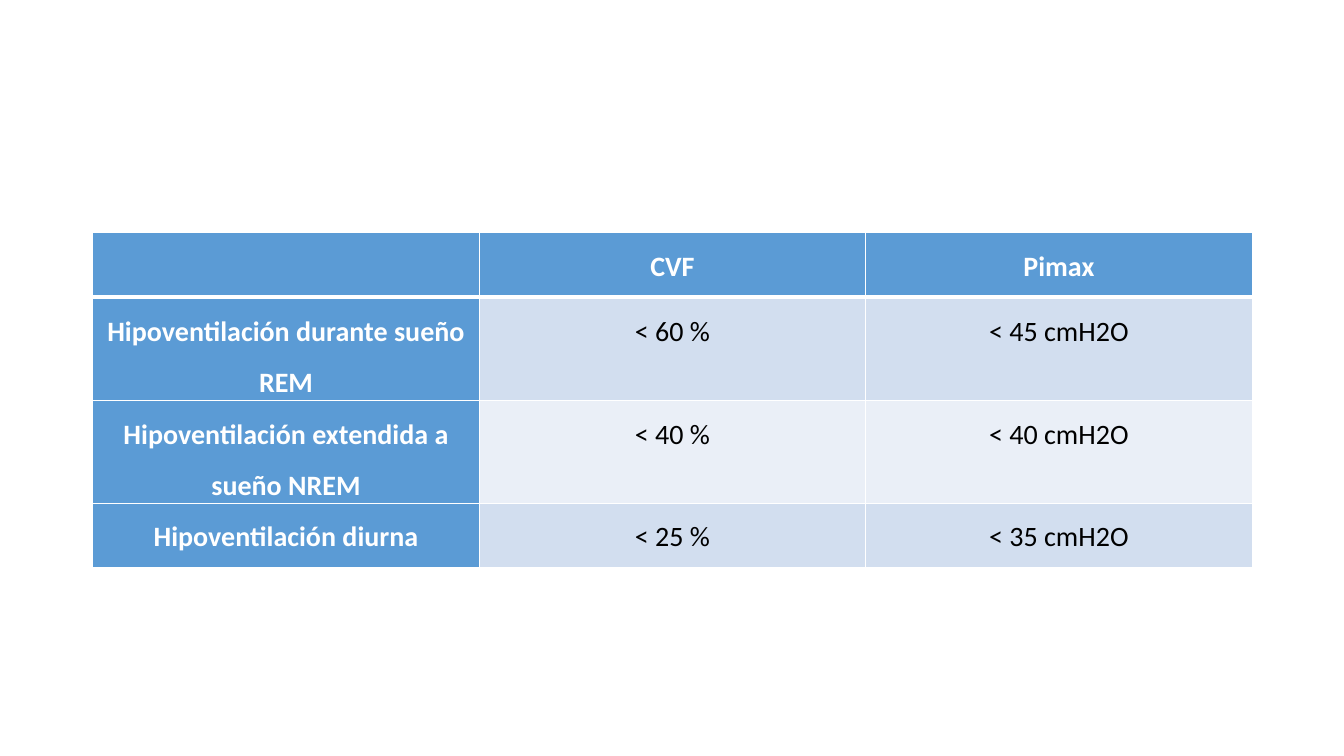
import pptx
import pptx.util
import pptx.dml.color
import pptx.enum.text
import pptx.oxml
import pptx.oxml.ns
from pptx.util import Inches

BLUE = pptx.dml.color.RGBColor(0x5B, 0x9B, 0xD5)
BAND_DARK = pptx.dml.color.RGBColor(0xD2, 0xDE, 0xEF)
BAND_LIGHT = pptx.dml.color.RGBColor(0xEA, 0xEF, 0xF7)
WHITE = pptx.dml.color.RGBColor(0xFF, 0xFF, 0xFF)
BLACK = pptx.dml.color.RGBColor(0, 0, 0)

ROWS = [
    ("", "CVF", "Pimax"),
    ("Hipoventilación durante sueño REM", "< 60 %", "< 45 cmH2O"),
    ("Hipoventilación extendida a sueño NREM", "< 40 %", "< 40 cmH2O"),
    ("Hipoventilación diurna", "< 25 %", "< 35 cmH2O"),
]
LEFT, TOP, WIDTH, ROW_HEIGHT = 0.92, 2.31, 11.5, 0.64


def set_borders(cell, widths):
    """Draw white cell borders, given widths in points by side."""
    properties = cell._tc.get_or_add_tcPr()
    for position, side in enumerate("LRTB"):
        border = pptx.oxml.parse_xml(
            f'<a:ln{side} {pptx.oxml.ns.nsdecls("a")} w="{pptx.util.Pt(widths[side])}">'
            f'<a:solidFill><a:srgbClr val="{WHITE}"/></a:solidFill></a:ln{side}>'
        )
        properties.insert(position, border)


def fill_cell(cell, text, row, column):
    """Write and format one cell according to its place in the table."""
    is_heading = row == 0 or column == 0
    band = BAND_DARK if row % 2 else BAND_LIGHT
    cell.fill.solid()
    cell.fill.fore_color.rgb = BLUE if is_heading else band
    set_borders(cell, {"L": 1, "R": 1, "T": 3 if row == 1 else 1, "B": 3 if row == 0 else 1})
    cell.margin_left = cell.margin_right = Inches(0.07)
    cell.margin_top = cell.margin_bottom = 0
    if not text:
        return
    paragraph = cell.text_frame.paragraphs[0]
    paragraph.alignment = pptx.enum.text.PP_ALIGN.CENTER
    paragraph.line_spacing = 1.5
    run = paragraph.add_run()
    run.text = text
    run.font.name = "Calibri"
    run.font.size = pptx.util.Pt(20)
    run.font.bold = is_heading
    run.font.color.rgb = WHITE if is_heading else BLACK


def main():
    """Build the slide with the table of respiratory thresholds."""
    presentation = pptx.Presentation()
    presentation.slide_width = Inches(13.33)
    presentation.slide_height = Inches(7.5)
    slide = presentation.slides.add_slide(presentation.slide_layouts[6])
    table = slide.shapes.add_table(
        len(ROWS), len(ROWS[0]), Inches(LEFT), Inches(TOP),
        Inches(WIDTH), Inches(ROW_HEIGHT * len(ROWS)),
    ).table
    table.first_col = True
    for row, texts in enumerate(ROWS):
        for column, text in enumerate(texts):
            fill_cell(table.cell(row, column), text, row, column)
    presentation.save("out.pptx")


if __name__ == "__main__":
    main()
